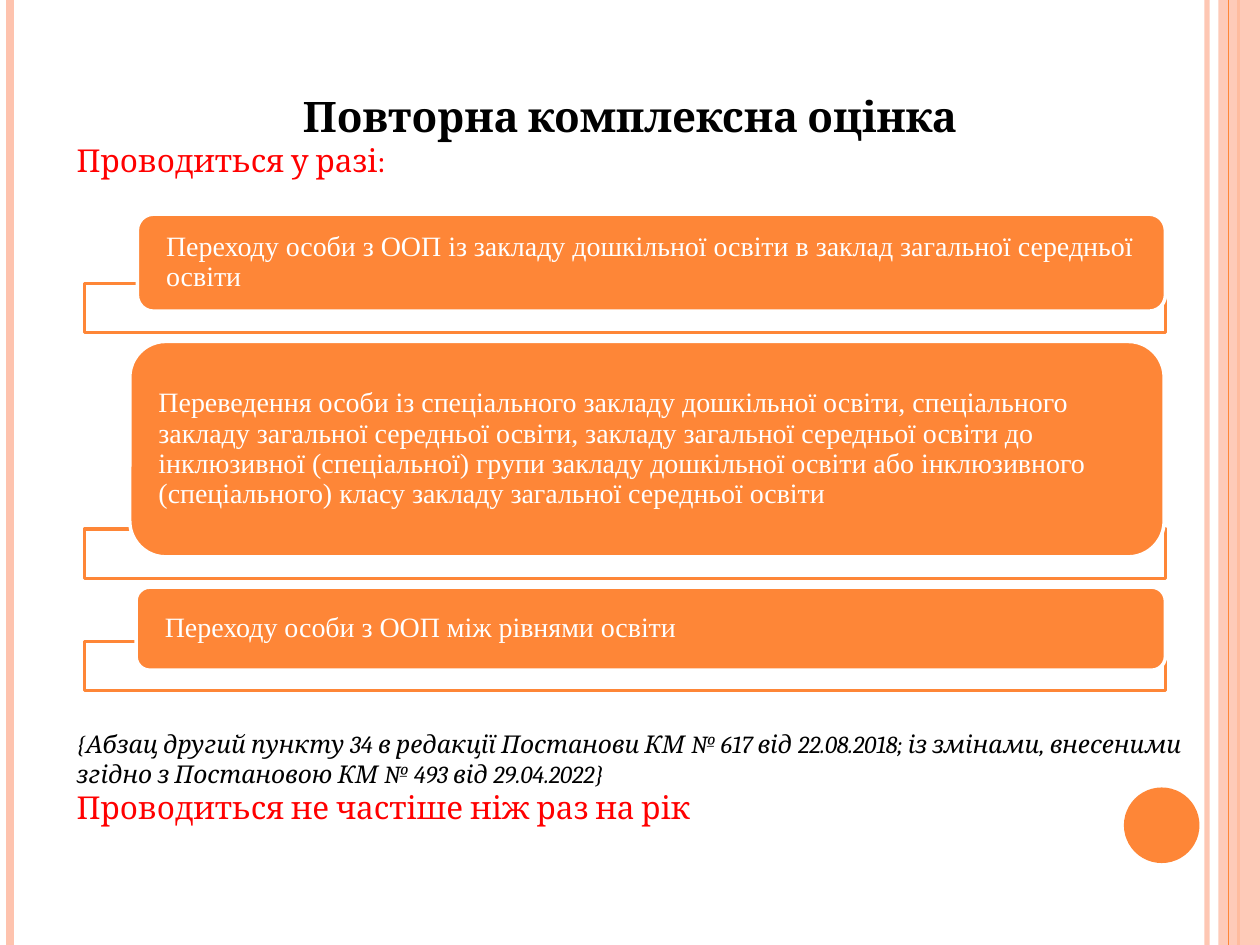
from dataclasses import dataclass

from lxml.etree import SubElement
from pptx import Presentation
from pptx.dml.color import RGBColor
from pptx.enum.shapes import MSO_CONNECTOR, MSO_SHAPE
from pptx.enum.text import MSO_ANCHOR, PP_ALIGN
from pptx.oxml.ns import qn
from pptx.util import Inches, Pt

ORANGE, PEACH, WHITE, BLACK, RED = "FE8637", "FEC3AE", "FFFFFF", "000000", "FF0000"
BAR_LEFT, BAR_WIDTH, BAR_HEIGHT = 0.67, 8.58, 0.39
INSET, CORNER = 0.23, 0.05


@dataclass
class Rule:
    x: float
    color: str
    width: float
    alpha: int = 100


@dataclass
class Line:
    text: str
    size: float
    color: str
    bold: bool = False
    italic: bool = False
    align: PP_ALIGN = PP_ALIGN.LEFT


@dataclass
class Case:
    left: float
    top: float
    width: float
    height: float
    bar: float
    text: str


RULES = [
    Rule(9.58, PEACH, 3, 93),
    Rule(0.08, PEACH, 4.5),
    Rule(9.83, ORANGE, 1.5),
]
EDGE = Rule(9.75, ORANGE, 0.75)
HEAD = [
    Line("Повторна комплексна оцінка", 24, BLACK, bold=True, align=PP_ALIGN.CENTER),
    Line("Проводиться у разі:", 18, RED),
]
FOOT = [
    Line("{Абзац другий пункту 34 в редакції Постанови КМ № 617 від 22.08.2018; "
         "із змінами, внесеними згідно з Постановою КМ № 493 від 29.04.2022}",
         14, BLACK, italic=True),
    Line("Проводиться не частіше ніж раз на рік", 18, RED),
]
CASES = [
    Case(1.09, 1.7, 8.16, 0.77, 2.25,
         "Переходу особи з ООП із закладу дошкільної освіти в заклад "
         "загальної середньої освіти"),
    Case(1.03, 2.71, 8.21, 1.71, 4.2,
         "Переведення особи із спеціального закладу дошкільної освіти, спеціального "
         "закладу загальної середньої освіти, закладу загальної середньої освіти до "
         "інклюзивної (спеціальної) групи закладу дошкільної освіти або інклюзивного "
         "(спеціального) класу закладу загальної середньої освіти"),
    Case(1.08, 4.66, 8.17, 0.66, 5.09, "Переходу особи з ООП між рівнями освіти"),
]


def tint(code: str) -> RGBColor:
    return RGBColor.from_string(code)


def fade(shape, alpha: int) -> None:
    if alpha < 100:
        color = next(shape._element.spPr.iter(qn("a:srgbClr")))
        SubElement(color, qn("a:alpha")).set("val", str(alpha * 1000))


def add_rule(slide, rule: Rule) -> None:
    x = Inches(rule.x)
    link = slide.shapes.add_connector(MSO_CONNECTOR.STRAIGHT, x, 0, x, Inches(7.5))
    link.line.color.rgb = tint(rule.color)
    link.line.width = Pt(rule.width)
    fade(link, rule.alpha)
    SubElement(link._element.spPr, qn("a:effectLst"))


def add_block(slide, kind: MSO_SHAPE, left: float, top: float, width: float,
              height: float, fill: str, edge: str = "", alpha: int = 100):
    block = slide.shapes.add_shape(
        kind, Inches(left), Inches(top), Inches(width), Inches(height))
    block.shadow.inherit = False
    block.fill.solid()
    block.fill.fore_color.rgb = tint(fill)
    fade(block, alpha)
    if edge:
        block.line.color.rgb = tint(edge)
        block.line.width = Pt(2)
    else:
        block.line.fill.background()
    return block


def set_font(para, name: str, size: float, color: str) -> None:
    para.font.name = name
    para.font.size = Pt(size)
    para.font.color.rgb = tint(color)


def add_text(slide, top: float, height: float, lines: list[Line]) -> None:
    box = slide.shapes.add_textbox(
        Inches(0.51), Inches(top), Inches(8.98), Inches(height))
    frame = box.text_frame
    frame.word_wrap = True
    for i, line in enumerate(lines):
        para = frame.add_paragraph() if i else frame.paragraphs[0]
        para.text = line.text
        para.alignment = line.align
        set_font(para, "Cambria", line.size, line.color)
        para.font.bold = line.bold
        para.font.italic = line.italic


def add_case(slide, case: Case) -> None:
    add_block(slide, MSO_SHAPE.RECTANGLE, BAR_LEFT, case.bar, BAR_WIDTH,
              BAR_HEIGHT, WHITE, ORANGE)
    card = add_block(slide, MSO_SHAPE.ROUNDED_RECTANGLE, case.left, case.top,
                     case.width, case.height, ORANGE, WHITE)
    frame = card.text_frame
    frame.word_wrap = True
    frame.vertical_anchor = MSO_ANCHOR.MIDDLE
    frame.margin_left = frame.margin_right = Inches(INSET - CORNER * case.height)
    frame.margin_top = frame.margin_bottom = 0
    para = frame.paragraphs[0]
    para.text = case.text
    para.alignment = PP_ALIGN.LEFT
    para.line_spacing = 0.9
    set_font(para, "Times New Roman", 16, WHITE)


def main() -> None:
    deck = Presentation()
    deck.slide_width, deck.slide_height = Inches(10), Inches(7.5)
    slide = deck.slides.add_slide(deck.slide_layouts[6])
    for rule in RULES:
        add_rule(slide, rule)
    add_block(slide, MSO_SHAPE.RECTANGLE, 9.67, 0, 0.33, 7.5, PEACH, alpha=87)
    add_rule(slide, EDGE)
    add_block(slide, MSO_SHAPE.OVAL, 8.92, 6.25, 0.6, 0.6, ORANGE)
    add_text(slide, 0.67, 0.8, HEAD)
    add_text(slide, 5.74, 0.9, FOOT)
    for case in CASES:
        add_case(slide, case)
    deck.save("out.pptx")


if __name__ == "__main__":
    main()
